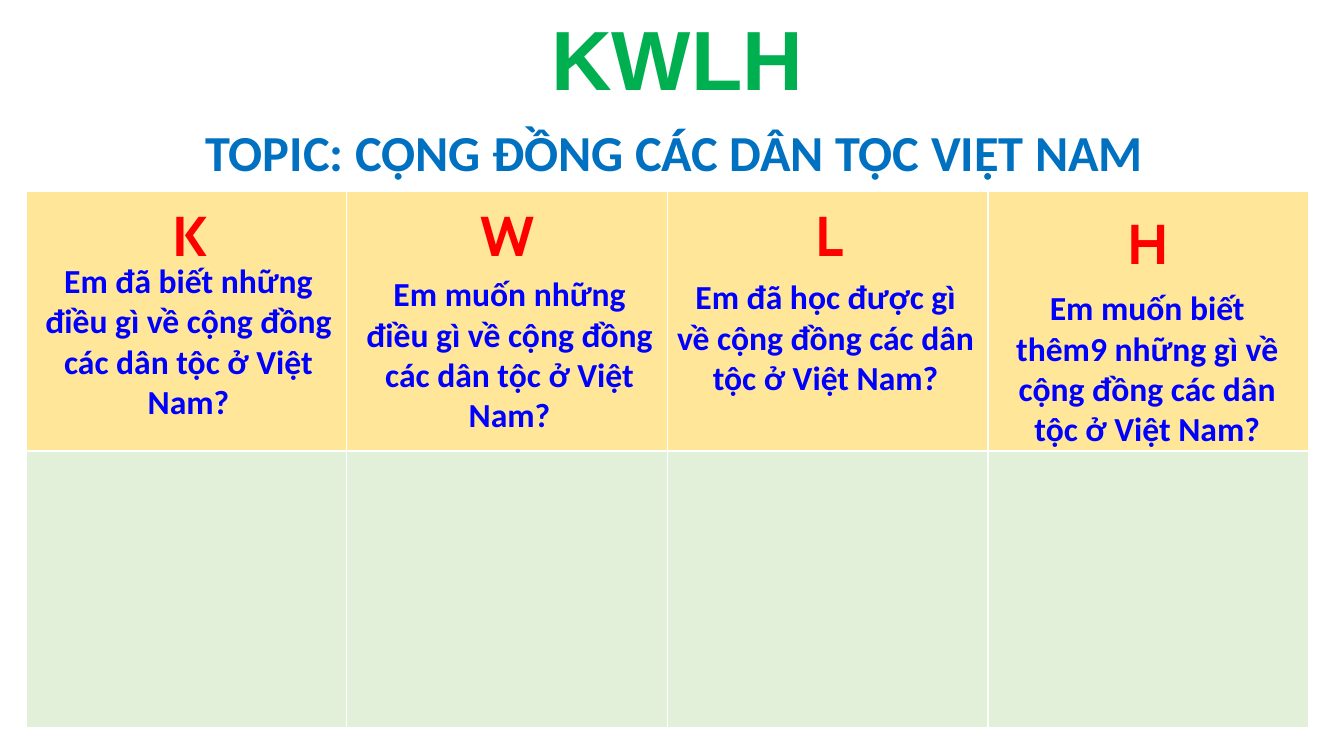
from pptx import Presentation
from pptx.dml.color import RGBColor
from pptx.enum.text import MSO_AUTO_SIZE, PP_ALIGN
from pptx.util import Pt

LEFT, CENTER = PP_ALIGN.LEFT, PP_ALIGN.CENTER
GROW = MSO_AUTO_SIZE.SHAPE_TO_FIT_TEXT

COLORS = {
    "title": "00B050",
    "topic": "0070C0",
    "letter": "FF0000",
    "question": "0000FF",
    "header": "FFE699",
    "answer": "E2F0D9",
}

# letter, its box (dx, dy, width), question, its box; offsets are from the column's corner
COLUMNS = [
    ("K", (2.2, 2.9, 229.7),
     "Em đã biết những điều gì về cộng đồng các dân tộc ở Việt Nam?", (2.2, 45.4, 227.5)),
    ("W", (2.2, 2.9, 225.4),
     "Em muốn những điều gì về cộng đồng các dân tộc ở Việt Nam?", (1.4, 54.7, 229.7)),
    ("L", (1.4, 2.9, 228.2),
     "Em đã học được gì về cộng đồng các dân tộc ở Việt Nam?", (-0.7, 56.9, 227.5)),
    ("H", (2.9, 8.6, 223.2),
     "Em muốn biết thêm9 những gì về cộng đồng các dân tộc ở Việt Nam?", (2.2, 64.8, 223.2)),
]
ROW_HEIGHTS = (185.4, 197.3)


def add_text(slide, text, box, size, font, color, align=CENTER):
    sp = slide.shapes.add_textbox(*(Pt(v) for v in box))
    tf = sp.text_frame
    tf.word_wrap = True
    tf.auto_size = GROW
    p = tf.paragraphs[0]
    p.text = text
    p.alignment = align
    p.font.size = Pt(size)
    p.font.name = font
    p.font.bold = True
    p.font.color.rgb = RGBColor.from_string(COLORS[color])


def add_heading(slide, left, top, width):
    add_text(slide, "KWLH", (left + 343.4, top, 200.2, 80), 60, "Arial", "title", LEFT)
    add_text(slide, "TOPIC: CỘNG ĐỒNG CÁC DÂN TỘC VIỆT NAM",
             (left, top + 81.4, width, 51), 36, "Calibri", "topic")


def add_kwlh_table(slide, left, top, width):
    """Draw the two-row grid and lay each column's letter and question over it."""
    frame = slide.shapes.add_table(len(ROW_HEIGHTS), len(COLUMNS), Pt(left), Pt(top),
                                   Pt(width), Pt(sum(ROW_HEIGHTS)))
    for row, height, fill in zip(frame.table.rows, ROW_HEIGHTS, ("header", "answer")):
        row.height = Pt(height)
        for cell in row.cells:
            cell.fill.solid()
            cell.fill.fore_color.rgb = RGBColor.from_string(COLORS[fill])

    column_width = width / len(COLUMNS)
    for i, (letter, letter_box, question, question_box) in enumerate(COLUMNS):
        x = left + i * column_width
        dx, dy, w = letter_box
        add_text(slide, letter, (x + dx, top + dy, w, 55.4), 40, "Cabin", "letter")
        dx, dy, w = question_box
        add_text(slide, question, (x + dx, top + dy, w, 123.8), 24, "Calibri", "question")


def main():
    prs = Presentation()
    prs.slide_width, prs.slide_height = Pt(960), Pt(540)
    slide = prs.slides.add_slide(prs.slide_layouts[6])
    add_kwlh_table(slide, 18.7, 136.8, 916)
    add_heading(slide, 43.2, 1.4, 877)
    prs.save("out.pptx")


if __name__ == "__main__":
    main()
